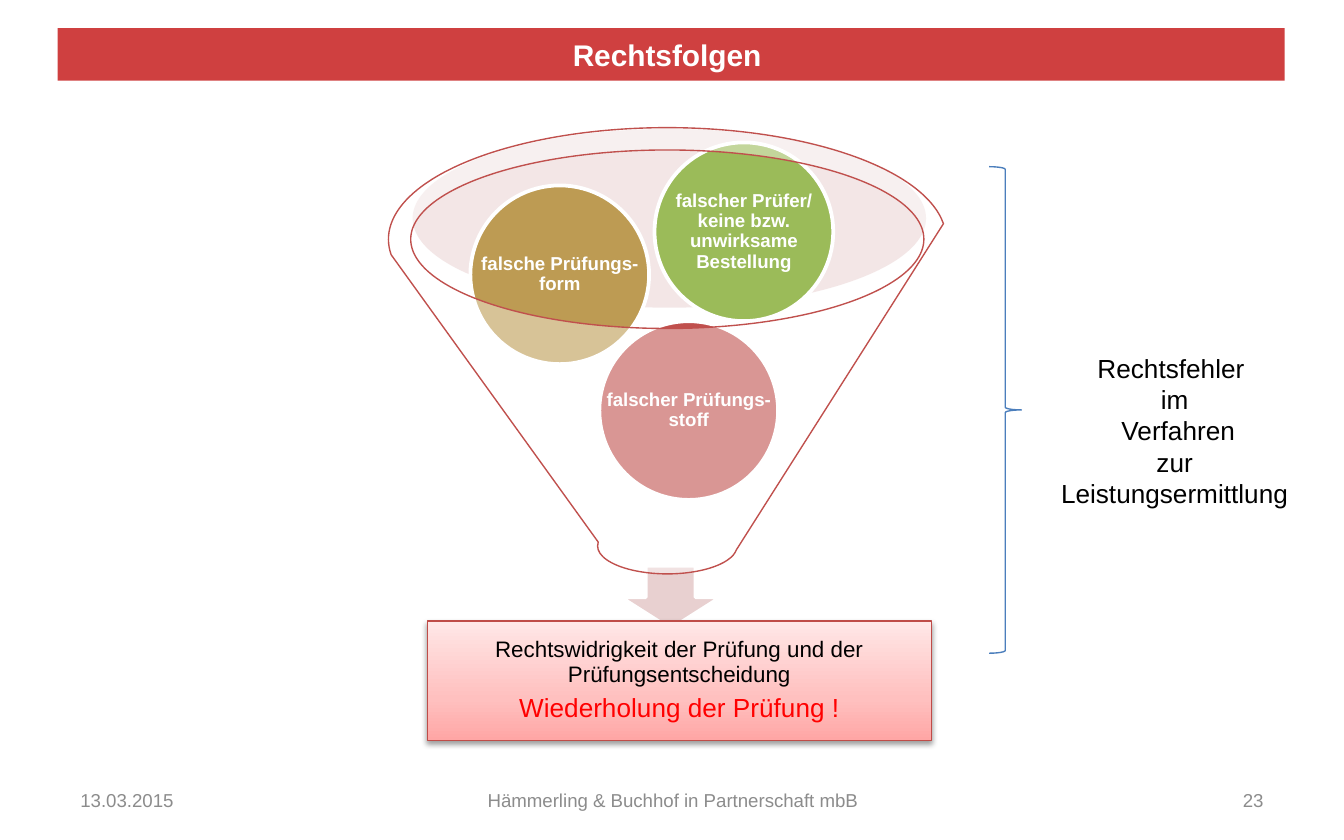
from copy import deepcopy

from lxml.etree import SubElement
from pptx import Presentation
from pptx.dml.color import RGBColor
from pptx.enum.shapes import MSO_SHAPE as Shape
from pptx.enum.text import MSO_ANCHOR as Anchor, MSO_AUTO_SIZE as AutoSize, PP_ALIGN as Align
from pptx.oxml.ns import qn
from pptx.util import Inches, Pt

WHITE = RGBColor(0xFF, 0xFF, 0xFF)
BLACK = RGBColor(0x00, 0x00, 0x00)
RED = RGBColor(0xFF, 0x00, 0x00)
BANNER_RED = RGBColor(0xC0, 0x00, 0x00)
FOOTER_GREY = RGBColor(0x8C, 0x8C, 0x8C)
FUNNEL_RED = RGBColor(0xC0, 0x50, 0x4D)
RIM_PINK = RGBColor(0xE2, 0xC2, 0xC2)
ARROW_PINK = RGBColor(0xE8, 0xD0, 0xD0)
OCHRE = RGBColor(0xBD, 0x9B, 0x53)
GREEN = RGBColor(0x9B, 0xBB, 0x59)
BRACE_BLUE = RGBColor(0x4B, 0x7E, 0xBC)
RESULT_LINE = RGBColor(0xBF, 0x4C, 0x48)
RESULT_STOPS = [
    (0, RGBColor(0xFF, 0xA6, 0xA5)),
    (0.35, RGBColor(0xFF, 0xC0, 0xBF)),
    (1, RGBColor(0xFF, 0xE7, 0xE7)),
]


class SlideBuilder:
    """Holds the text style and the current slide."""

    font_name = "Arial"

    def __init__(self, slide):
        self.slide = slide

    def add_shape(self, kind, box, fill=None, opacity=None, line=None, width=0.75):
        shape = self.slide.shapes.add_shape(kind, *map(Inches, box))
        shape.shadow.inherit = False
        if fill is None:
            shape.fill.background()
        else:
            shape.fill.solid()
            shape.fill.fore_color.rgb = fill
        if opacity is not None:
            color = shape._element.spPr.find(qn("a:solidFill"))[0]
            SubElement(color, qn("a:alpha"), val=str(opacity * 1000))
        if line is None:
            shape.line.fill.background()
        else:
            shape.line.color.rgb = line
            shape.line.width = Pt(width)
        return shape

    def add_gradient(self, shape, stops):
        """Fill the shape from bottom to top."""
        shape.fill.gradient()
        shape.fill.gradient_angle = 90
        stop_list = shape._element.spPr.find(qn("a:gradFill")).find(qn("a:gsLst"))
        stop_list.append(deepcopy(stop_list[0]))
        for stop, (position, color) in zip(shape.fill.gradient_stops, stops):
            stop.position = position
            stop.color.rgb = color

    def add_shadow(self, shape):
        effects = shape._element.spPr.find(qn("a:effectLst"))
        shadow = SubElement(effects, qn("a:outerShdw"), blurRad=str(Pt(3.1)),
                            dist=str(Pt(1.6)), dir="5400000", rotWithShape="0")
        color = SubElement(shadow, qn("a:srgbClr"), val=str(BLACK))
        SubElement(color, qn("a:alpha"), val="38000")

    def set_text(self, shape, lines, inset=None, paragraph_format=None, **frame_format):
        """Fill a shape with lines given as (text, size, color, bold)."""
        frame = shape.text_frame
        frame_values = {"word_wrap": True, "vertical_anchor": Anchor.MIDDLE}
        if inset is not None:
            for side in ("left", "top", "right", "bottom"):
                frame_values[f"margin_{side}"] = Inches(inset)
        for name, value in (frame_values | frame_format).items():
            setattr(frame, name, value)
        paragraph_values = {"alignment": Align.CENTER} | (paragraph_format or {})
        for index, (text, size, color, bold) in enumerate(lines):
            paragraph = frame.add_paragraph() if index else frame.paragraphs[0]
            for name, value in paragraph_values.items():
                setattr(paragraph, name, value)
            run = paragraph.add_run()
            run.text = text
            font_values = {"name": self.font_name, "size": Pt(size), "bold": bold}
            for name, value in font_values.items():
                setattr(run.font, name, value)
            run.font.color.rgb = color

    def add_text(self, box, lines, **options):
        text_box = self.slide.shapes.add_textbox(*map(Inches, box))
        self.set_text(text_box, lines, **options)


def main():
    presentation = Presentation()
    presentation.slide_width = Inches(10)
    presentation.slide_height = Inches(6.25)
    builder = SlideBuilder(presentation.slides.add_slide(presentation.slide_layouts[6]))
    tight = {"line_spacing": 0.9, "space_after": Pt(4.2)}

    # Footer
    for left, width, text, alignment in [
        (0.5, 2.33, "13.03.2015", Align.LEFT),
        (3.42, 3.17, "Hämmerling & Buchhof in Partnerschaft mbB", Align.CENTER),
        (7.17, 2.33, "23", Align.RIGHT),
    ]:
        builder.add_text((left, 5.79, width, 0.33), [(text, 10, FOOTER_GREY, False)],
                         paragraph_format={"alignment": alignment})

    # Title banner
    banner = builder.add_shape(Shape.RECTANGLE, (0.43, 0.21, 9.13, 0.39), BANNER_RED, 75)
    builder.set_text(banner, [("Rechtsfolgen ", 16, WHITE, True)])

    # Funnel rim and outlet arrow
    builder.add_shape(Shape.OVAL, (3.07, 0.96, 3.82, 1.33), RIM_PINK, 40)
    builder.add_shape(Shape.DOWN_ARROW, (4.62, 4.21, 0.74, 0.47), ARROW_PINK,
                      line=WHITE, width=2)

    # Result box
    result = builder.add_shape(Shape.RECTANGLE, (3.18, 4.62, 3.75, 0.89), line=RESULT_LINE)
    builder.add_gradient(result, RESULT_STOPS)
    builder.add_shadow(result)
    builder.set_text(result, [
        ("Rechtswidrigkeit der Prüfung und der Prüfungsentscheidung", 12, BLACK, False),
        ("Wiederholung der Prüfung !", 14, RED, False),
    ], inset=0.09, paragraph_format=tight)

    # Errors inside the funnel; the labels are wider than a circle's own text area
    for left, top, color, text in [
        (4.46, 2.39, FUNNEL_RED, "falscher Prüfungs-stoff"),
        (3.5, 1.38, OCHRE, "falsche Prüfungs-form"),
        (4.87, 1.06, GREEN, "falscher Prüfer/ keine bzw. unwirksame Bestellung"),
    ]:
        box = (left, top, 1.33, 1.33)
        builder.add_shape(Shape.OVAL, box, color, line=WHITE, width=2)
        builder.add_text(box, [(text, 10, WHITE, True)], inset=0.01, paragraph_format=tight)

    # Funnel
    builder.add_shape(Shape.FUNNEL, (2.89, 0.95, 4.15, 3.32), WHITE, 40, FUNNEL_RED)

    # Brace and its label
    builder.add_shape(Shape.RIGHT_BRACE, (7.36, 1.24, 0.24, 3.62), line=BRACE_BLUE)
    words = ["Rechtsfehler ", "im", " Verfahren", " zur ", "Leistungsermittlung"]
    builder.add_text((7.79, 2.57, 1.9, 1.28), [(word, 14, BLACK, False) for word in words],
                     word_wrap=False, vertical_anchor=Anchor.TOP,
                     auto_size=AutoSize.SHAPE_TO_FIT_TEXT)

    presentation.save("out.pptx")


if __name__ == "__main__":
    main()
